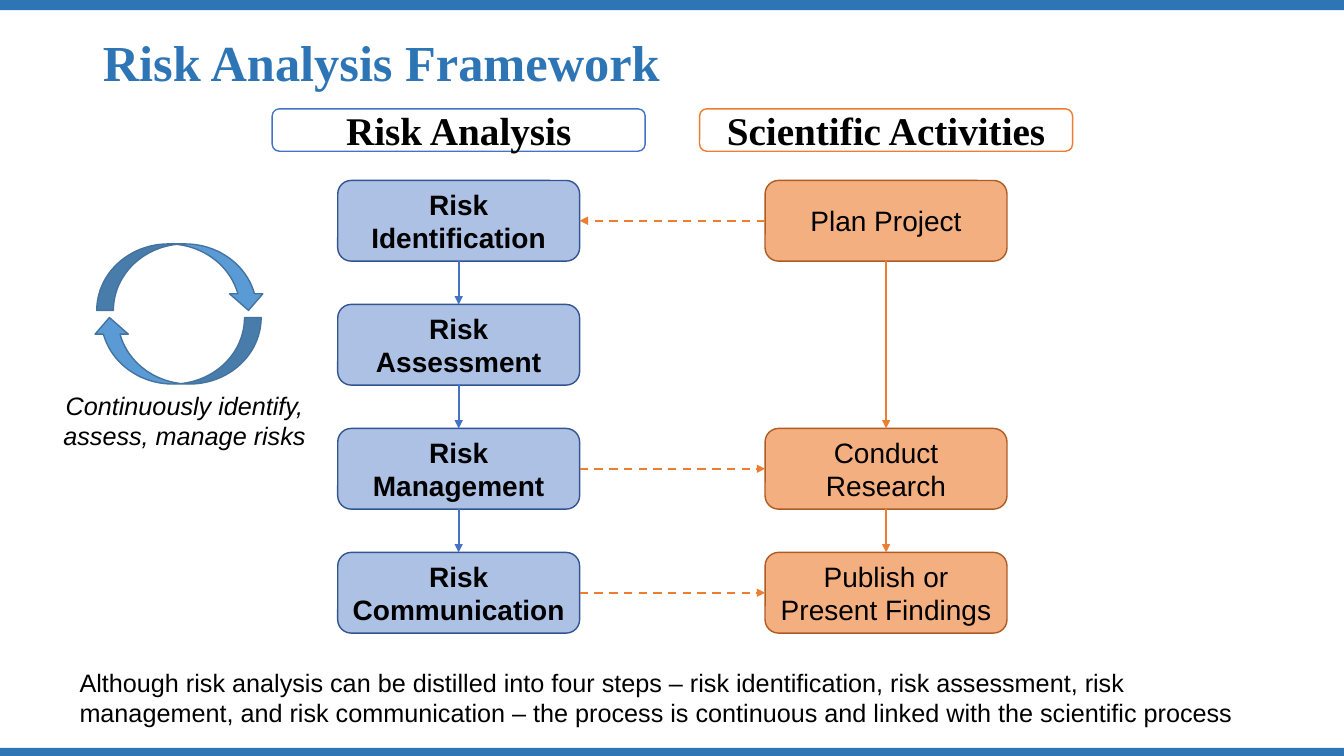
from lxml.etree import SubElement
from pptx import Presentation
from pptx.dml.color import RGBColor
from pptx.enum.dml import MSO_LINE
from pptx.enum.shapes import MSO_CONNECTOR, MSO_SHAPE
from pptx.enum.text import MSO_ANCHOR, MSO_AUTO_SIZE, PP_ALIGN
from pptx.oxml.ns import qn
from pptx.util import Inches, Pt

BAND, BLUE, ORANGE = "2E75B6", "4472C4", "ED7D31"
TOP, LEFT, BOTTOM, RIGHT = range(4)

# Flow chart grid, in percent of the page width or height
FIRST_CENTER, COLUMN_PITCH = 34.13, 31.8
FIRST_ROW, ROW_PITCH = 23.87, 16.4
BOX_WIDTH, BOX_HEIGHT = 18, 10.67
HEADING_WIDTH = 27.75

HEADINGS = [("Risk Analysis", BLUE), ("Scientific Activities", ORANGE)]
RISK_STEPS = ["Risk Identification", "Risk Assessment",
              "Risk Management", "Risk Communication"]
SCIENCE_STEPS = {0: "Plan Project", 2: "Conduct Research",
                 3: "Publish or Present Findings"}


def color(value):
    return RGBColor.from_string(value)


class FrameworkPage:
    """Draws on one slide; every area is left, top, width, height in percent."""

    def __init__(self, deck):
        self.deck = deck
        self.page = deck.slides.add_slide(deck.slide_layouts[5])

    def place(self, area):
        left, top, width, height = area
        across, down = self.deck.slide_width / 100, self.deck.slide_height / 100
        return (round(left * across), round(top * down),
                round(width * across), round(height * down))

    def label(self, box, text, size, font="Arial", ink="000000",
              bold=False, italic=False, align=PP_ALIGN.CENTER):
        frame = box.text_frame
        frame.word_wrap = True
        frame.text = text
        para = frame.paragraphs[0]
        para.alignment = align
        for span in para.runs:
            span.font.name, span.font.size = font, Pt(size)
            span.font.bold, span.font.italic = bold, italic
            span.font.color.rgb = color(ink)

    def title(self, text, area):
        box = self.page.shapes.title
        box.left, box.top, box.width, box.height = self.place(area)
        self.label(box, text, 36, "Times New Roman", BAND, bold=True,
                   align=PP_ALIGN.LEFT)
        box.text_frame.auto_size = MSO_AUTO_SIZE.NONE
        box.text_frame.vertical_anchor = MSO_ANCHOR.MIDDLE
        box.text_frame.paragraphs[0].line_spacing = 0.9

    def shape(self, kind, area, fill, outline=None):
        box = self.page.shapes.add_shape(kind, *self.place(area))
        box.shadow.inherit = False
        box.fill.solid()
        box.fill.fore_color.rgb = color(fill)
        if outline:
            box.line.color.rgb = color(outline)
            box.line.width = Pt(1)
        else:
            box.line.fill.background()
        return box

    def rounded(self, column, top, width, height, fill, outline, text, size, **style):
        """Add a labelled rounded box centred on a flow chart column."""
        left = FIRST_CENTER + column * COLUMN_PITCH - width / 2
        box = self.shape(MSO_SHAPE.ROUNDED_RECTANGLE,
                         (left, top, width, height), fill, outline)
        box.text_frame.vertical_anchor = MSO_ANCHOR.MIDDLE
        self.label(box, text, size, **style)
        return box

    def step(self, column, row, text, fill, outline, bold=False):
        return self.rounded(column, FIRST_ROW + row * ROW_PITCH, BOX_WIDTH,
                            BOX_HEIGHT, fill, outline, text, 20, bold=bold)

    def note(self, text, area, **style):
        box = self.page.shapes.add_textbox(*self.place(area))
        self.label(box, text, 18, **style)

    def arrow(self, start, start_side, end, end_side, ink, dashed=False):
        link = self.page.shapes.add_connector(MSO_CONNECTOR.STRAIGHT, 0, 0, 0, 0)
        link.begin_connect(start, start_side)
        link.end_connect(end, end_side)
        link.line.color.rgb = color(ink)
        link.line.width = Pt(1.5)
        if dashed:
            link.line.dash_style = MSO_LINE.DASH
        properties = link.element.spPr
        SubElement(properties.find(qn("a:ln")), qn("a:tailEnd"), type="triangle")
        SubElement(properties, qn("a:effectLst"))

    def chain(self, boxes, ink):
        """Join each box to the one below it."""
        for upper, lower in zip(boxes, boxes[1:]):
            self.arrow(upper, BOTTOM, lower, TOP, ink)


def main():
    deck = Presentation()
    deck.slide_width, deck.slide_height = Inches(13.33), Inches(7.5)
    page = FrameworkPage(deck)

    page.title("Risk Analysis Framework", (6.9, 2.4, 86.27, 12.4))
    for top, height in [(0, 1.33), (98.93, 1.07)]:
        page.shape(MSO_SHAPE.RECTANGLE, (0, top, 100, height), BAND)

    risk = [page.step(0, row, text, "ADC1E5", "325491", bold=True)
            for row, text in enumerate(RISK_STEPS)]
    science = {row: page.step(1, row, text, "F4AF80", "AF5C24")
               for row, text in SCIENCE_STEPS.items()}
    page.chain(risk, BLUE)
    page.chain(list(science.values()), ORANGE)

    for column, (text, outline) in enumerate(HEADINGS):
        page.rounded(column, 14.4, HEADING_WIDTH, 5.6, "FFFFFF", outline,
                     text, 28, font="Times New Roman", bold=True)

    page.note("Although risk analysis can be distilled into four steps – risk "
              "identification, risk assessment, risk management, and risk "
              "communication – the process is continuous and linked with the "
              "scientific process", (5.18, 87.6, 89.65, 9.47), align=PP_ALIGN.LEFT)

    for left, top, turn in [(7.2, 32.27, 0), (6.9, 42, 180)]:
        cycle = page.shape(MSO_SHAPE.CURVED_DOWN_ARROW, (left, top, 12.53, 8.8),
                           "5B9BD5", "43739E")
        cycle.rotation = turn
    page.note("Continuously identify, assess, manage risks",
              (3, 50.93, 21.45, 9.47), italic=True)

    page.arrow(science[0], LEFT, risk[0], RIGHT, ORANGE, dashed=True)
    for row in (2, 3):
        page.arrow(risk[row], RIGHT, science[row], LEFT, ORANGE, dashed=True)

    deck.save("out.pptx")


if __name__ == "__main__":
    main()
